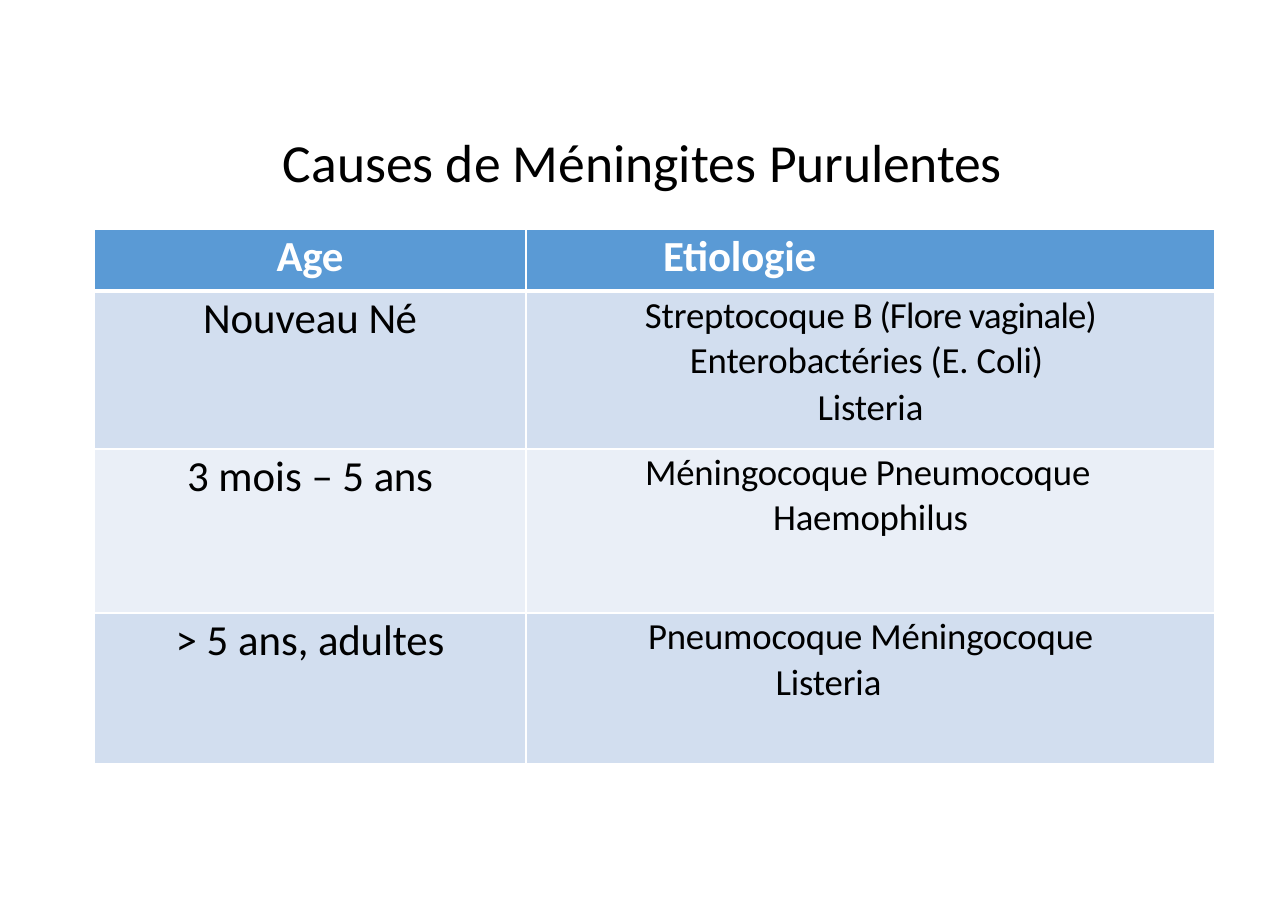
from pptx import Presentation
from pptx.dml.color import RGBColor
from pptx.enum.text import PP_ALIGN as Align
from pptx.oxml import parse_xml
from pptx.oxml.ns import nsdecls
from pptx.util import Pt

PX = 8298  # EMU per px
WHITE, BLACK = "FFFFFF", "000000"


def color(value):
    return RGBColor.from_string(value)


def write(para, spans, size, ink=BLACK, bold=False, align=Align.CENTER,
          before=1.4, line=None, left=0, right=0, first=0):
    """Fill a paragraph with (text, letter spacing in 1/100 pt) spans."""
    for name, value in {"alignment": align, "space_before": Pt(before),
                        "line_spacing": line}.items():
        setattr(para, name, value)
    margins = para._p.get_or_add_pPr()
    for name, value in {"marL": left, "marR": right, "indent": first}.items():
        margins.set(name, str(value * PX))
    for text, spacing in spans:
        span = para.add_run()
        span.text = text
        for name, value in {"name": "Calibri", "size": Pt(size), "bold": bold}.items():
            setattr(span.font, name, value)
        span.font.color.rgb = color(ink)
        span._r.get_or_add_rPr().set("spc", str(spacing))


deck = Presentation()
deck.slide_width, deck.slide_height = 1288 * PX, 910 * PX
page = deck.slides.add_slide(deck.slide_layouts[6])

# Title
box = page.shapes.add_textbox(115 * PX, 128 * PX, 1059 * PX, 67 * PX)
frame = box.text_frame
frame.word_wrap = True
for side, gap in {"left": 0, "top": 1, "right": 0, "bottom": 0}.items():
    setattr(frame, "margin_" + side, gap * PX)
write(frame.paragraphs[0], [("Causes de Méningites ", 0), ("Purulentes", -10)], 35,
      align=Align.LEFT, before=1, left=168)

# Cell contents: a list of (spans, format) paragraphs for each cell
header = dict(size=28, ink=WHITE, bold=True)
age = dict(size=28)
newborn = dict(size=24, line=1.01, before=1.1, left=77, right=77)
rows = [
    [[([("Age", -20)], header)],
     [([("Etiologie", -10)], header | dict(align=Align.LEFT, left=137))]],
    [[([("Nouveau ", 0), ("Né", -30)], age | dict(before=1.2))],
     [([("Streptocoque ", -10), ("B (Flore vaginale) ", -50),
        ("Enterobactéries (E. Coli) ", -10)], newborn),
      ([("Listeria", -10)], newborn)]],
    [[([("3 mois – 5 ", 0), ("ans", -20)], age)],
     [([("Méningocoque Pneumocoque Haemophilus", -10)],
       dict(size=24, line=1.0, before=1.3, left=88, right=88, first=-6))]],
    [[([("> 5 ans, ", 0), ("adultes", -10)], age)],
     [([("Pneumocoque Méningocoque", -10)], dict(size=24, left=84, right=84)),
      ([("Listeria", -10)], dict(size=24, before=0.5, right=84))]],
]
fills = ["5A9AD5", "D2DEEF", "EAEFF7", "D2DEEF"]
widths, heights = [432, 689], [62, 158, 164, 151]

# Table
table = page.shapes.add_table(len(rows), len(widths), 94 * PX, 229 * PX,
                              sum(widths) * PX, sum(heights) * PX).table
for column, width in zip(table.columns, widths):
    column.width = width * PX
for row, height in zip(table.rows, heights):
    row.height = height * PX

for r, row in enumerate(rows):
    for c, paragraphs in enumerate(row):
        cell = table.cell(r, c)
        for side, gap in {"left": 0, "top": 2, "right": 0, "bottom": 0}.items():
            setattr(cell, "margin_" + side, gap * PX)
        for i, (spans, style) in enumerate(paragraphs):
            frame = cell.text_frame
            para = frame.add_paragraph() if i else frame.paragraphs[0]
            write(para, spans, **style)

        # White borders, thicker under the header
        borders = cell._tc.get_or_add_tcPr()
        for side in "LRTB":
            weight = 3 if (r, side) in [(0, "B"), (1, "T")] else 1
            borders.append(parse_xml(
                f'<a:ln{side} {nsdecls("a")} w="{Pt(weight)}"><a:solidFill>'
                f'<a:srgbClr val="{WHITE}"/></a:solidFill></a:ln{side}>'))
        cell.fill.solid()
        cell.fill.fore_color.rgb = color(fills[r])

deck.save("out.pptx")
